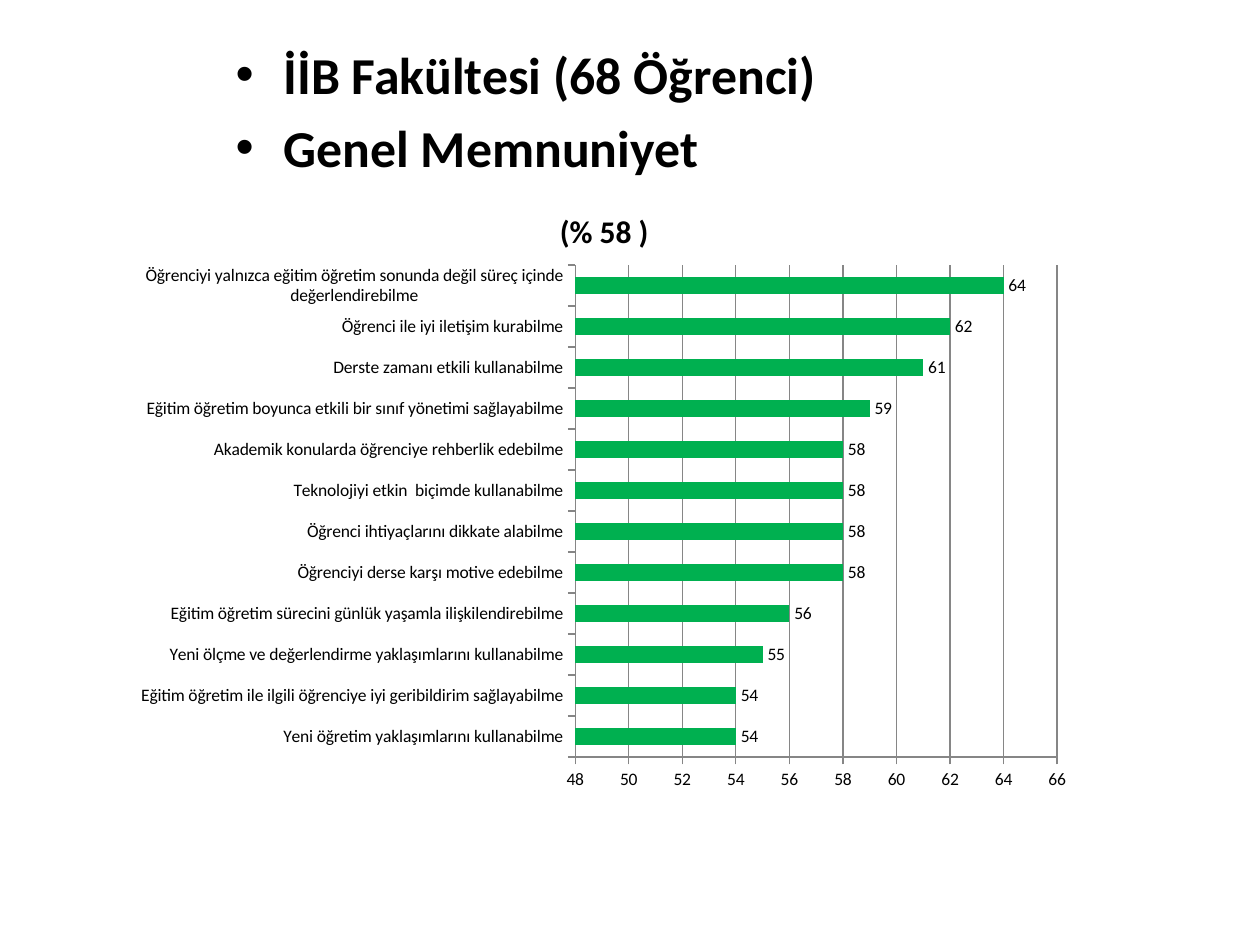
from typing import NamedTuple

from lxml.etree import SubElement
from pptx import Presentation
from pptx.chart.data import CategoryChartData
from pptx.dml.color import RGBColor
from pptx.enum.chart import XL_CHART_TYPE as ChartType, XL_LABEL_POSITION as LabelPosition
from pptx.enum.chart import XL_TICK_MARK as TickMark
from pptx.enum.text import MSO_ANCHOR as Anchor, MSO_AUTO_SIZE as AutoSize, PP_ALIGN as Align
from pptx.oxml import parse_xml
from pptx.oxml.ns import nsdecls, qn
from pptx.util import Inches, Pt

FONT = "Calibri"
COLORS = {"text": "000000", "bar": "00B050", "line": "868686"}


class Score(NamedTuple):
    skill: str
    percent: int


HEADINGS = ("İİB Fakültesi (68 Öğrenci)", "Genel Memnuniyet")
SCORES = (
    Score("Yeni öğretim yaklaşımlarını kullanabilme", 54),
    Score("Eğitim öğretim ile ilgili öğrenciye iyi geribildirim sağlayabilme", 54),
    Score("Yeni ölçme ve değerlendirme yaklaşımlarını kullanabilme", 55),
    Score("Eğitim öğretim sürecini günlük yaşamla ilişkilendirebilme", 56),
    Score("Öğrenciyi derse karşı motive edebilme", 58),
    Score("Öğrenci ihtiyaçlarını dikkate alabilme", 58),
    Score("Teknolojiyi etkin  biçimde kullanabilme", 58),
    Score("Akademik konularda öğrenciye rehberlik edebilme", 58),
    Score("Eğitim öğretim boyunca etkili bir sınıf yönetimi sağlayabilme", 59),
    Score("Derste zamanı etkili kullanabilme", 61),
    Score("Öğrenci ile iyi iletişim kurabilme", 62),
    Score("Öğrenciyi yalnızca eğitim öğretim sonunda değil süreç içinde değerlendirebilme", 64),
)


def color(name: str) -> RGBColor:
    return RGBColor.from_string(COLORS[name])


def style_font(font, size: float, bold: bool = False) -> None:
    font.name, font.size, font.bold = FONT, Pt(size), bold
    font.color.rgb = color("text")


def style_line(line) -> None:
    line.color.rgb = color("line")
    line.width = Pt(0.75)


def add_bullet(paragraph) -> None:
    properties = paragraph._p.get_or_add_pPr()
    properties.set("marL", str(Inches(0.38)))
    properties.set("indent", str(Inches(-0.38)))
    SubElement(properties, qn("a:buFont")).set("typeface", "Arial")
    SubElement(properties, qn("a:buChar")).set("char", "•")


def fill_heading(heading) -> None:
    heading.left, heading.top = Inches(1.77), Inches(0.29)
    heading.width, heading.height = Inches(6.54), Inches(1.18)
    frame = heading.text_frame
    frame.word_wrap = True
    frame.auto_size = AutoSize.NONE
    frame.vertical_anchor = Anchor.TOP
    for index, wording in enumerate(HEADINGS):
        paragraph = frame.add_paragraph() if index else frame.paragraphs[0]
        paragraph.alignment = Align.LEFT
        paragraph.space_before = Pt(5.9)
        add_bullet(paragraph)
        run = paragraph.add_run()
        run.text = wording
        style_font(run.font, 29.6, bold=True)


def place_plot(chart, x: float, y: float, width: float, height: float) -> None:
    """Fix the inner plot area, in fractions of the chart."""
    plot_area = chart._chartSpace.chart.plotArea
    for old_layout in plot_area.findall(qn("c:layout")):
        plot_area.remove(old_layout)
    plot_area.insert(0, parse_xml(
        f'<c:layout {nsdecls("c")}><c:manualLayout><c:layoutTarget val="inner"/>'
        '<c:xMode val="edge"/><c:yMode val="edge"/>'
        f'<c:x val="{x}"/><c:y val="{y}"/><c:w val="{width}"/><c:h val="{height}"/>'
        '</c:manualLayout></c:layout>'))


def add_score_chart(slide) -> None:
    scores = CategoryChartData(number_format="0")
    scores.categories = [score.skill for score in SCORES]
    scores.add_series("Series 1", [score.percent for score in SCORES])
    chart = slide.shapes.add_chart(
        ChartType.BAR_CLUSTERED, Inches(0.97), Inches(1.47), Inches(7.65), Inches(4.88), scores
    ).chart
    style_font(chart.font, 10)
    chart.has_legend = False

    chart.has_title = True
    title_run = chart.chart_title.text_frame.paragraphs[0].add_run()
    title_run.text = "(% 58 )"
    style_font(title_run.font, 18, bold=True)
    chart.chart_title.include_in_layout = False

    for axis in (chart.category_axis, chart.value_axis):
        axis.major_tick_mark = TickMark.OUTSIDE
        axis.minor_tick_mark = TickMark.NONE
        style_line(axis.format.line)
    percent_axis = chart.value_axis
    percent_axis.minimum_scale, percent_axis.maximum_scale = 48, 66
    percent_axis.major_unit = 2
    percent_axis.has_major_gridlines = True
    style_line(percent_axis.major_gridlines.format.line)
    percent_axis.tick_labels.number_format = "0"
    percent_axis.tick_labels.number_format_is_linked = False

    plot = chart.plots[0]
    plot.gap_width = 150
    plot.vary_by_categories = False
    bars = plot.series[0]
    bars.format.fill.solid()
    bars.format.fill.fore_color.rgb = color("bar")
    labels = bars.data_labels
    labels.show_value = True
    labels.number_format, labels.number_format_is_linked = "0", False
    labels.position = LabelPosition.OUTSIDE_END
    style_font(labels.font, 10)
    place_plot(chart, 0.47, 0.13, 0.5, 0.8)


def main() -> None:
    deck = Presentation()
    deck.slide_width, deck.slide_height = Inches(10), Inches(7.5)
    slide = deck.slides.add_slide(deck.slide_layouts.get_by_name("Title Only"))
    fill_heading(slide.shapes.title)
    add_score_chart(slide)
    deck.save("out.pptx")


if __name__ == "__main__":
    main()
